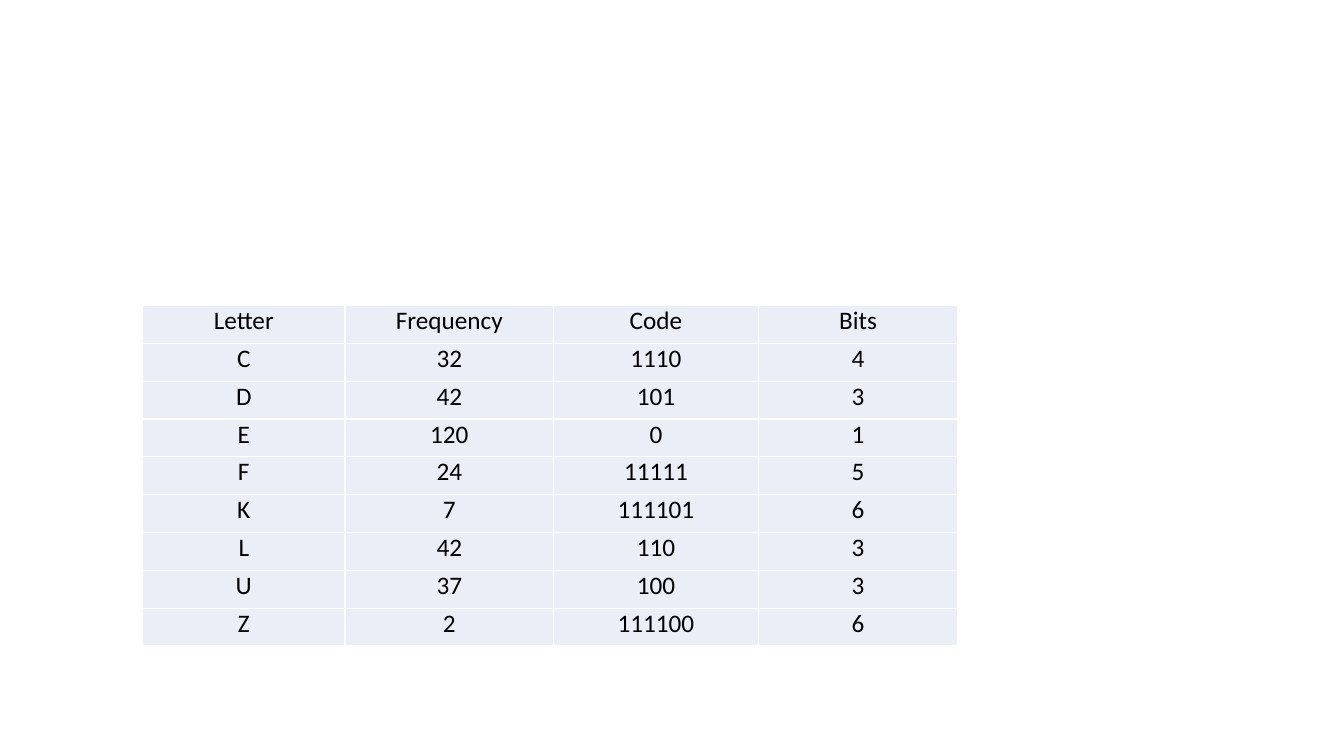
"""Build a slide with a table of letter frequencies and their Huffman codes."""
from lxml.etree import SubElement
from pptx import Presentation
from pptx.dml.color import RGBColor
from pptx.enum.text import PP_ALIGN
from pptx.oxml.ns import qn
from pptx.util import Pt

COLORS = {"cell": "EAEFF7", "line": "FFFFFF", "text": "000000"}
ROWS = [
    ("Letter", "Frequency", "Code", "Bits"),
    ("C", "32", "1110", "4"),
    ("D", "42", "101", "3"),
    ("E", "120", "0", "1"),
    ("F", "24", "11111", "5"),
    ("K", "7", "111101", "6"),
    ("L", "42", "110", "3"),
    ("U", "37", "100", "3"),
    ("Z", "2", "111100", "6"),
]
WIDTHS = [144.7, 149, 146.2, 142.6]
HEIGHT = 27.04


def add_lines(cell):
    props = cell._tc.get_or_add_tcPr()
    for side in ("a:lnL", "a:lnR", "a:lnT", "a:lnB"):
        line = SubElement(props, qn(side), w=str(Pt(1)))
        fill = SubElement(line, qn("a:solidFill"))
        SubElement(fill, qn("a:srgbClr"), val=COLORS["line"])


deck = Presentation()
deck.slide_width, deck.slide_height = Pt(960), Pt(540)
slide = deck.slides.add_slide(deck.slide_layouts[6])

frame = slide.shapes.add_table(
    len(ROWS), len(WIDTHS), Pt(101.8), Pt(218.3), Pt(sum(WIDTHS)), Pt(HEIGHT * len(ROWS))
)
table = frame.table
table.first_row = False
table.horz_banding = False
for column, width in zip(table.columns, WIDTHS):
    column.width = Pt(width)

for row, words in zip(table.rows, ROWS):
    row.height = Pt(HEIGHT)
    for cell, word in zip(row.cells, words):
        cell.margin_left = cell.margin_right = Pt(5)
        cell.margin_top = cell.margin_bottom = Pt(0)
        add_lines(cell)
        cell.fill.solid()
        cell.fill.fore_color.rgb = RGBColor.from_string(COLORS["cell"])
        cell.text_frame.text = word
        para = cell.text_frame.paragraphs[0]
        para.alignment = PP_ALIGN.CENTER
        font = para.runs[0].font
        font.name = "Calibri"
        font.size = Pt(18)
        font.color.rgb = RGBColor.from_string(COLORS["text"])

deck.save("out.pptx")
